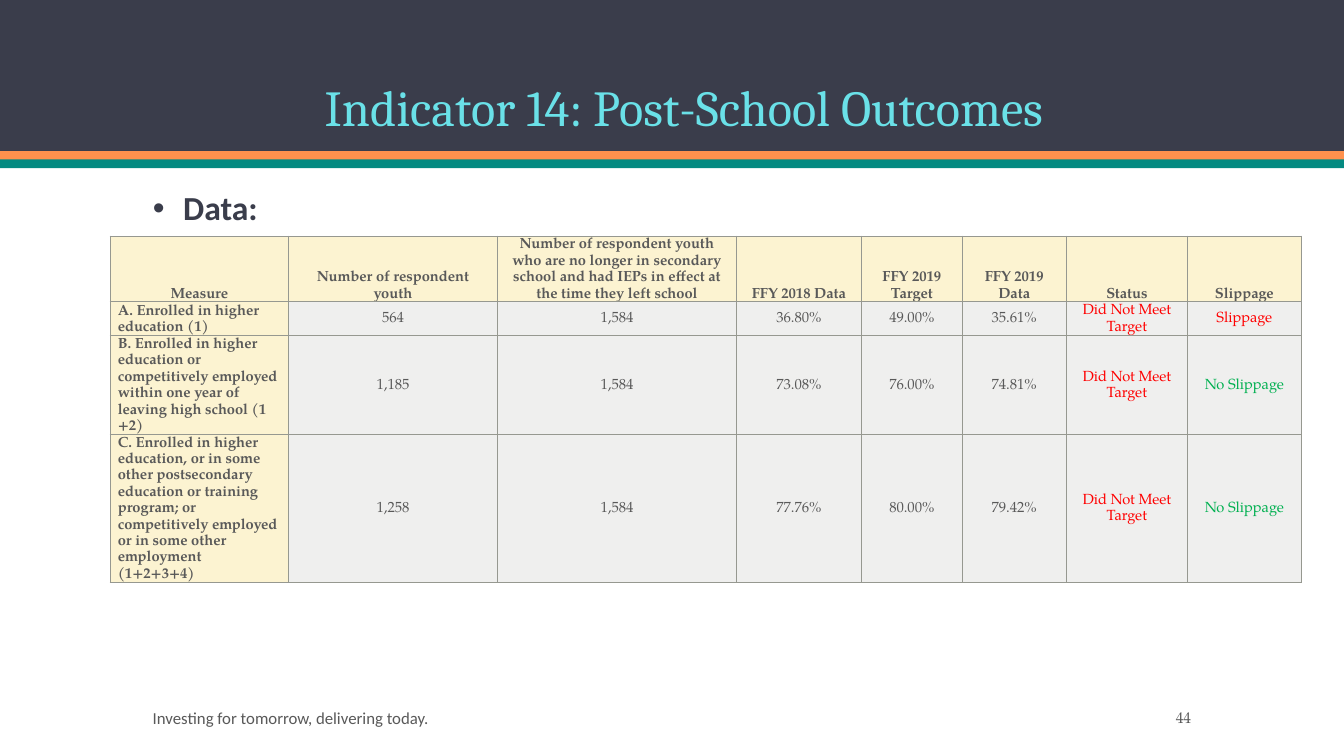
import pptx
import pptx.util
from lxml import etree
from pptx.dml.color import RGBColor
from pptx.enum.shapes import MSO_SHAPE
from pptx.enum.text import MSO_ANCHOR, MSO_AUTO_SIZE, PP_ALIGN
from pptx.oxml.ns import qn
from pptx.util import Cm

NAVY = RGBColor(0x3A, 0x3D, 0x4B)
ORANGE = RGBColor(0xFF, 0x91, 0x4D)
TEAL = RGBColor(0x04, 0x8A, 0x81)
AQUA = RGBColor(0x6A, 0xE1, 0xE8)
GRAY = RGBColor(0x59, 0x59, 0x59)
CREAM = RGBColor(0xFC, 0xF3, 0xD1)
PALE = RGBColor(0xEF, 0xEF, 0xEE)
BORDER = RGBColor(0x96, 0x98, 0x90)
RED = RGBColor(0xFF, 0x00, 0x00)
GREEN = RGBColor(0x00, 0xB0, 0x50)

TABLE_FONT = "TeX Gyre Pagella"
STATUS_COLORS = {"Did Not Meet Target": RED, "Slippage": RED, "No Slippage": GREEN}
COLUMN_WIDTHS = (4.49, 5.27, 6.02, 3.15, 2.54, 2.62, 3.06, 2.86)
ROW_HEIGHTS = (1.64, 0.86, 2.47, 3.73)
ROWS = (
    ("Measure", "Number of respondent youth",
     "Number of respondent youth who are no longer in secondary school "
     "and had IEPs in effect at the time they left school",
     "FFY 2018 Data", "FFY 2019 Target", "FFY 2019 Data", "Status", "Slippage"),
    ("A. Enrolled in higher education (1)",
     "564", "1,584", "36.80%", "49.00%", "35.61%",
     "Did Not Meet Target", "Slippage"),
    ("B. Enrolled in higher education or competitively employed "
     "within one year of leaving high school (1 +2)",
     "1,185", "1,584", "73.08%", "76.00%", "74.81%",
     "Did Not Meet Target", "No Slippage"),
    ("C. Enrolled in higher education, or in some other postsecondary "
     "education or training program; or competitively employed or in some "
     "other employment (1+2+3+4)",
     "1,258", "1,584", "77.76%", "80.00%", "79.42%",
     "Did Not Meet Target", "No Slippage"),
)


def set_attributes(target, values):
    for name, value in values.items():
        setattr(target, name, value)


def write_text(text_frame, text, name, size, color, bold=False, **paragraph_format):
    text_frame.word_wrap = True
    paragraph = text_frame.paragraphs[0]
    set_attributes(paragraph, paragraph_format)
    run = paragraph.add_run()
    run.text = text
    set_attributes(run.font, {"name": name, "size": pptx.util.Pt(size), "bold": bold})
    run.font.color.rgb = color
    return paragraph


def place(shape, left, top, width, height):
    set_attributes(shape, {"left": Cm(left), "top": Cm(top),
                           "width": Cm(width), "height": Cm(height)})


def add_band(slide, top, height, color):
    band = slide.shapes.add_shape(
        MSO_SHAPE.RECTANGLE, 0, Cm(top), Cm(33.87), Cm(height))
    band.shadow.inherit = False
    band.fill.solid()
    band.fill.fore_color.rgb = color
    band.line.fill.background()


def add_footer(slide, left, width, text, name, size, alignment):
    box = slide.shapes.add_textbox(Cm(left), Cm(17.7), Cm(width), Cm(0.76))
    box.text_frame.vertical_anchor = MSO_ANCHOR.MIDDLE
    write_text(box.text_frame, text, name, size, GRAY, alignment=alignment)


def fill_placeholders(slide):
    title, body = slide.placeholders
    place(title, 3.34, 0.71, 27.79, 2.87)
    place(body, 3.6, 4.7, 28.35, 15.49)
    set_attributes(title.text_frame, {"vertical_anchor": MSO_ANCHOR.BOTTOM,
                                      "auto_size": MSO_AUTO_SIZE.NONE})
    body.text_frame.auto_size = MSO_AUTO_SIZE.NONE
    write_text(title.text_frame, "Indicator 14: Post-School Outcomes",
               "Cambria", 36, AQUA, alignment=PP_ALIGN.CENTER, line_spacing=0.9)
    bullet = write_text(body.text_frame, "Data:", "Calibri", 24, NAVY, bold=True,
                        line_spacing=0.9, space_before=pptx.util.Pt(18))
    properties = bullet._p.get_or_add_pPr()
    properties.set("marL", str(Cm(0.76)))
    properties.set("indent", str(-Cm(0.76)))
    # Bring the text in front of the bands
    for placeholder in (title, body):
        slide.shapes._spTree.append(placeholder._element)


def add_borders(cell):
    properties = cell._tc.get_or_add_tcPr()
    for index, side in enumerate(("lnL", "lnR", "lnT", "lnB")):
        line = etree.Element(qn(f"a:{side}"), w=str(pptx.util.Pt(1)))
        fill = etree.SubElement(line, qn("a:solidFill"))
        etree.SubElement(fill, qn("a:srgbClr"), val=str(BORDER))
        properties.insert(index, line)


def format_cell(cell, text, is_header, is_measure):
    set_attributes(cell, {
        "margin_left": Cm(0.19), "margin_right": Cm(0.19),
        "margin_top": 0, "margin_bottom": 0,
        "vertical_anchor": MSO_ANCHOR.BOTTOM if is_header else MSO_ANCHOR.MIDDLE})
    cell.fill.solid()
    cell.fill.fore_color.rgb = CREAM if is_header or is_measure else PALE
    color = GRAY if is_header else STATUS_COLORS.get(text, GRAY)
    left_aligned = is_measure and not is_header
    write_text(cell.text_frame, text, TABLE_FONT, 10.5, color,
               bold=is_header or is_measure,
               alignment=PP_ALIGN.LEFT if left_aligned else PP_ALIGN.CENTER,
               line_spacing=pptx.util.Pt(11.7))
    add_borders(cell)


def add_outcomes_table(slide):
    table = slide.shapes.add_table(
        len(ROWS), len(COLUMN_WIDTHS), Cm(2.78), Cm(5.95),
        Cm(sum(COLUMN_WIDTHS)), Cm(sum(ROW_HEIGHTS))).table
    for column, width in zip(table.columns, COLUMN_WIDTHS):
        column.width = Cm(width)
    for row, height in zip(table.rows, ROW_HEIGHTS):
        row.height = Cm(height)
    for row_index, row in enumerate(ROWS):
        for column_index, text in enumerate(row):
            format_cell(table.cell(row_index, column_index), text,
                        row_index == 0, column_index == 0)


def main():
    presentation = pptx.Presentation()
    set_attributes(presentation, {"slide_width": Cm(33.87), "slide_height": Cm(19.05)})
    slide = presentation.slides.add_slide(presentation.slide_layouts[1])

    # Header bands
    add_band(slide, 0, 3.81, NAVY)
    add_band(slide, 3.81, 0.22, ORANGE)
    add_band(slide, 4.02, 0.22, TEAL)

    # Title and list
    fill_placeholders(slide)

    # Footer
    add_footer(slide, 3.6, 17.35, "Investing for tomorrow, delivering today.",
               "Calibri", 12, PP_ALIGN.LEFT)
    add_footer(slide, 26.46, 3.81, "44", TABLE_FONT, 11, PP_ALIGN.RIGHT)

    # Data table
    add_outcomes_table(slide)

    presentation.save("out.pptx")


if __name__ == "__main__":
    main()
